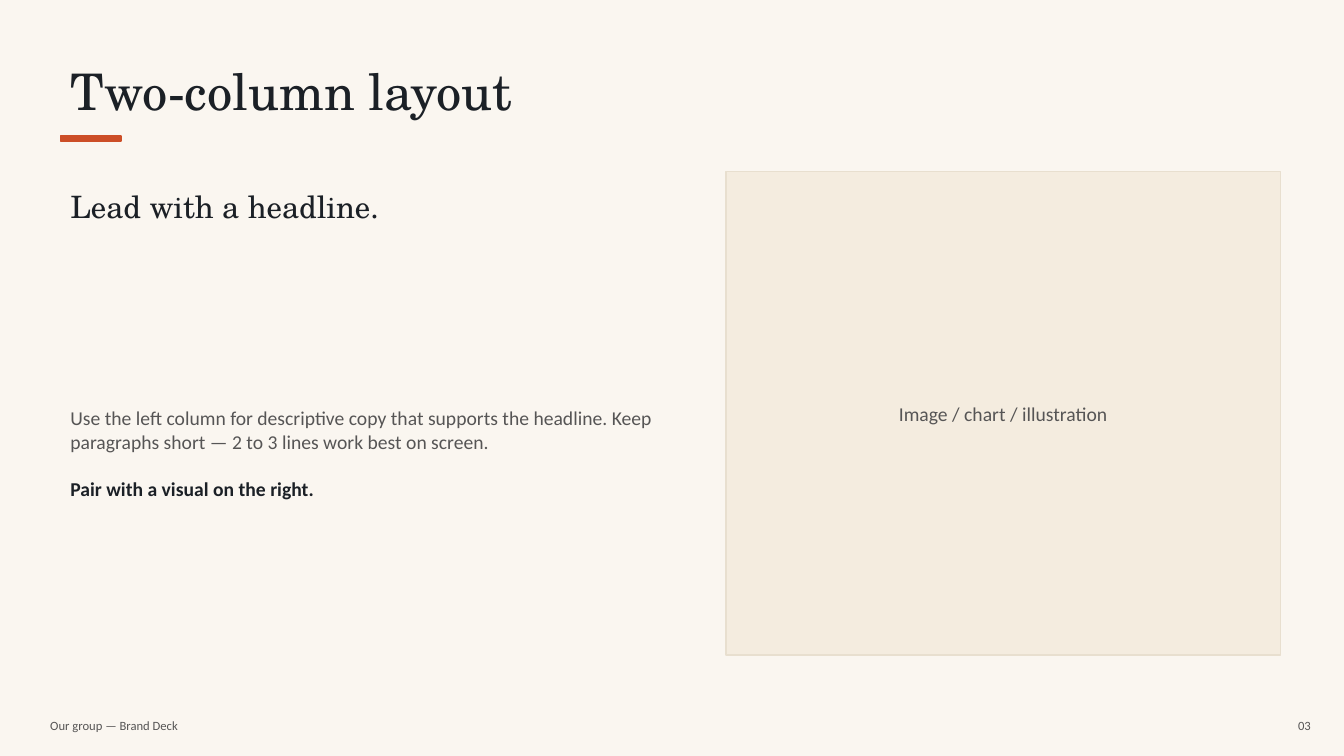
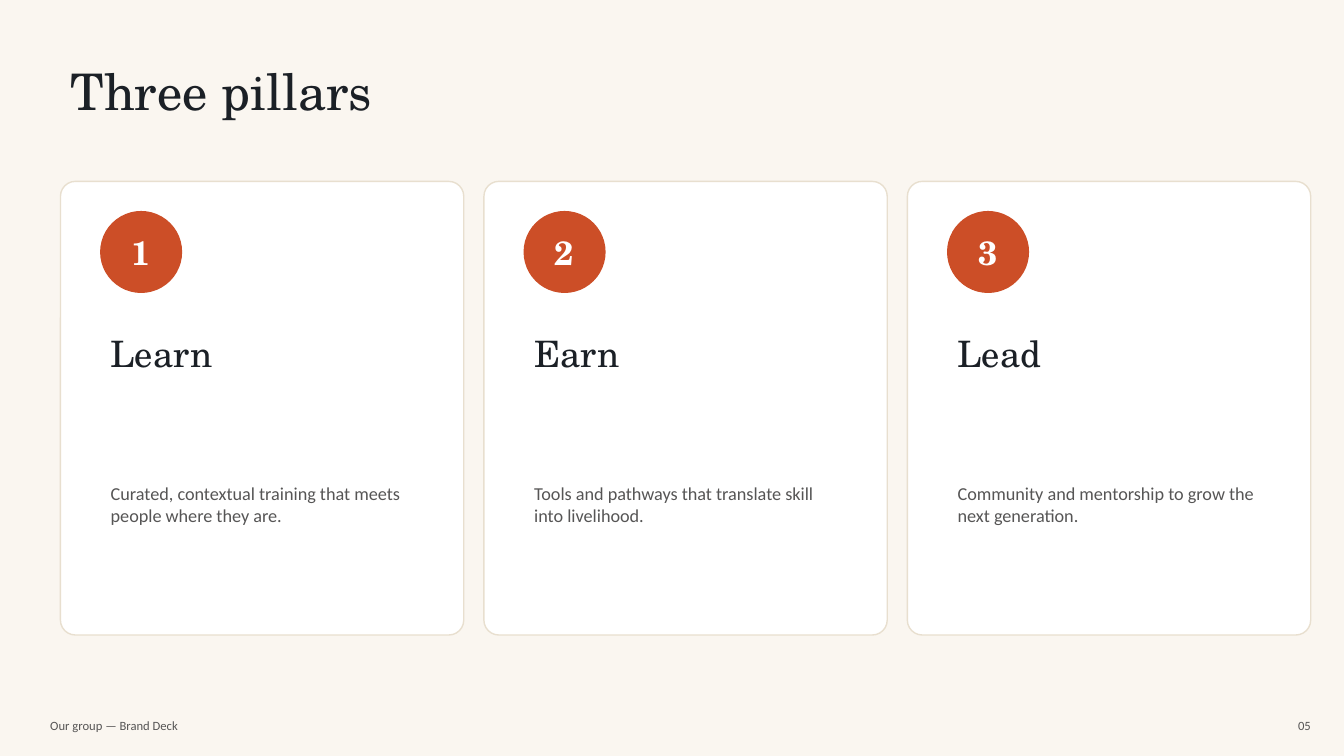
from dataclasses import dataclass

from pptx import Presentation
from pptx.dml import color
from pptx.enum import shapes, text
from pptx.util import Inches, Pt

# Shared palette and fonts
CREAM, SAND, BORDER = "FAF6F0", "F4ECDF", "E8DFCF"
INK, GREY, RUST, WHITE = "1B2026", "565555", "CC4E27", "FFFFFF"
SERIF, SANS = "TeX Gyre Schola", "Calibri"
LEFT, CENTER, RIGHT = text.PP_ALIGN.LEFT, text.PP_ALIGN.CENTER, text.PP_ALIGN.RIGHT
RECTANGLE = shapes.MSO_SHAPE.RECTANGLE
ROUNDED = shapes.MSO_SHAPE.ROUNDED_RECTANGLE
OVAL = shapes.MSO_SHAPE.OVAL


@dataclass(frozen=True)
class Box:
    left: float
    top: float
    width: float
    height: float

    def lengths(self):
        return [Inches(n) for n in (self.left, self.top, self.width, self.height)]


@dataclass(frozen=True)
class Style:
    size: float
    font: str = SANS
    color: str = GREY
    bold: bool = False


@dataclass(frozen=True)
class Pillar:
    name: str
    description: str


TITLE = Style(36, SERIF, INK)
HEADLINE = Style(22, SERIF, INK)
PILLAR_NAME = Style(26, SERIF, INK)
NUMBER = Style(24, SERIF, WHITE, True)
BODY = Style(14)
STRONG = Style(14, SANS, INK, True)
DESCRIPTION = Style(13)
FOOTER = Style(9)

PILLARS = [
    Pillar("Learn", "Curated, contextual training that meets people where they are."),
    Pillar("Earn", "Tools and pathways that translate skill into livelihood."),
    Pillar("Lead", "Community and mentorship to grow the next generation."),
]


def rgb(value: str) -> color.RGBColor:
    return color.RGBColor.from_string(value)


def write(shape, lines: list[tuple[str, Style]], align=LEFT, gap: float = 0) -> None:
    """Write one paragraph per line, with a gap in points between them."""
    frame = shape.text_frame
    frame.word_wrap = True
    frame.vertical_anchor = text.MSO_ANCHOR.MIDDLE
    for index, (words, style) in enumerate(lines):
        paragraph = frame.add_paragraph() if index else frame.paragraphs[0]
        paragraph.alignment = align
        if index:
            paragraph.space_before = Pt(gap)
        run = paragraph.add_run()
        run.text = words
        run.font.name, run.font.size = style.font, Pt(style.size)
        run.font.bold = style.bold
        run.font.color.rgb = rgb(style.color)


def add_text(slide, box: Box, words: str, style: Style, align=LEFT) -> None:
    write(slide.shapes.add_textbox(*box.lengths()), [(words, style)], align)


def add_panel(slide, kind, box: Box, fill: str, line: str):
    shape = slide.shapes.add_shape(kind, *box.lengths())
    shape.shadow.inherit = False
    shape.fill.solid()
    shape.fill.fore_color.rgb = rgb(fill)
    shape.line.color.rgb = rgb(line)
    shape.line.width = Pt(1)
    return shape


def add_slide(presentation, title: str, number: str):
    """Start a slide with the shared background, title and footer."""
    slide = presentation.slides.add_slide(presentation.slide_layouts[6])
    slide.background.fill.solid()
    slide.background.fill.fore_color.rgb = rgb(CREAM)
    add_text(slide, Box(0.6, 0.5, 12, 0.8), title, TITLE)
    add_text(slide, Box(0.4, 7.05, 6, 0.3), "Our group — Brand Deck", FOOTER)
    add_text(slide, Box(12.6, 7.05, 0.5, 0.3), number, FOOTER, RIGHT)
    return slide


def build_two_columns(presentation) -> None:
    slide = add_slide(presentation, "Two-column layout", "03")
    add_panel(slide, RECTANGLE, Box(0.6, 1.35, 0.6, 0.05), RUST, RUST)

    # Left column: headline and copy
    add_text(slide, Box(0.6, 1.7, 6, 0.7), "Lead with a headline.", HEADLINE)
    copy_box = slide.shapes.add_textbox(*Box(0.6, 2.5, 6, 4).lengths())
    write(copy_box, [
        ("Use the left column for descriptive copy that supports the headline. "
         "Keep paragraphs short — 2 to 3 lines work best on screen.", BODY),
        ("Pair with a visual on the right.", STRONG),
    ], gap=17)

    # Right column: visual area
    visual = add_panel(slide, RECTANGLE, Box(7.2, 1.7, 5.5, 4.8), SAND, BORDER)
    write(visual, [("Image / chart / illustration", BODY)], CENTER)


def add_pillar(slide, left: float, number: int, pillar: Pillar) -> None:
    card = add_panel(slide, ROUNDED, Box(left, 1.8, 4, 4.5), WHITE, BORDER)
    card.adjustments[0] = 0.037
    inner = left + 0.4
    badge = add_panel(slide, OVAL, Box(inner, 2.1, 0.8, 0.8), RUST, RUST)
    frame = badge.text_frame
    frame.margin_left = frame.margin_right = frame.margin_top = frame.margin_bottom = 0
    write(badge, [(str(number), NUMBER)], CENTER)
    add_text(slide, Box(inner, 3.2, 3.2, 0.6), pillar.name, PILLAR_NAME)
    add_text(slide, Box(inner, 4, 3.2, 2), pillar.description, DESCRIPTION)


def build_pillars(presentation) -> None:
    slide = add_slide(presentation, "Three pillars", "05")
    card_step = 4.2
    for index, pillar in enumerate(PILLARS):
        add_pillar(slide, 0.6 + index * card_step, index + 1, pillar)


def main() -> None:
    presentation = Presentation()
    presentation.slide_width = Inches(13.33)
    presentation.slide_height = Inches(7.5)
    build_two_columns(presentation)
    build_pillars(presentation)
    presentation.save("out.pptx")


if __name__ == "__main__":
    main()
